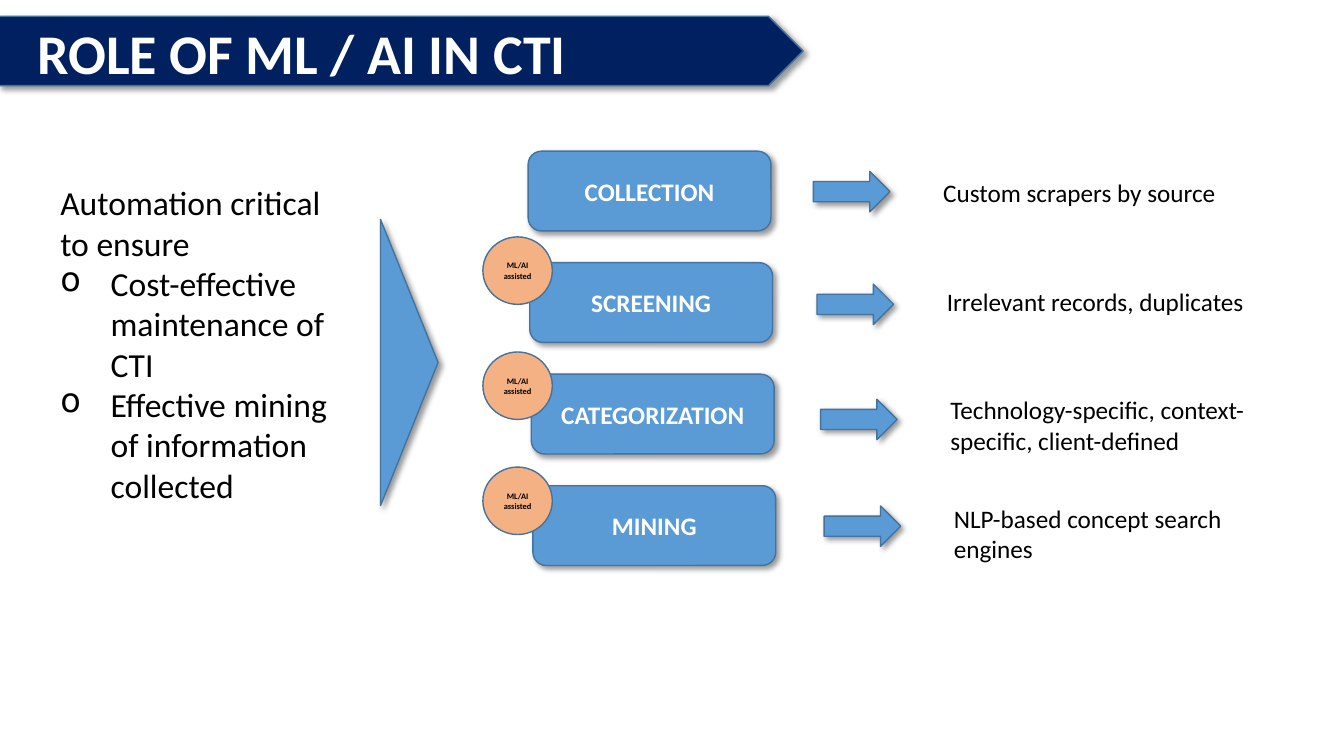
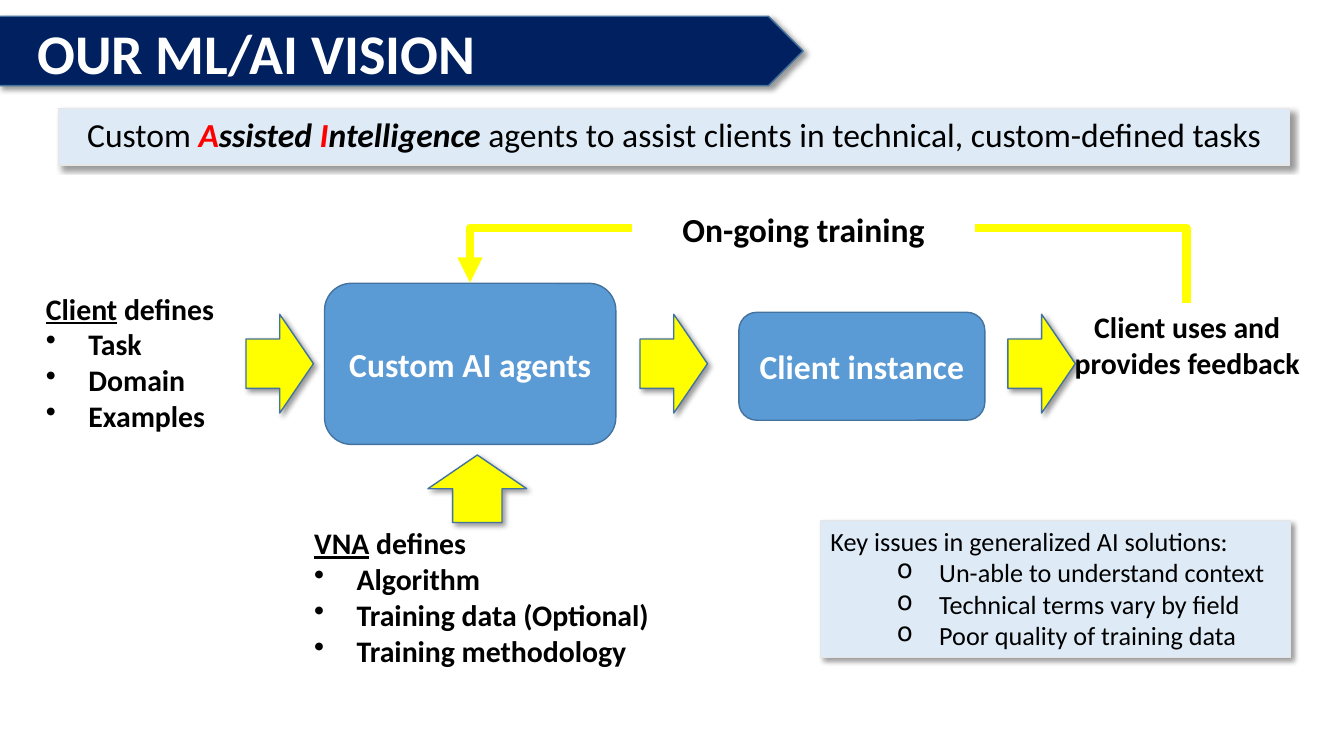
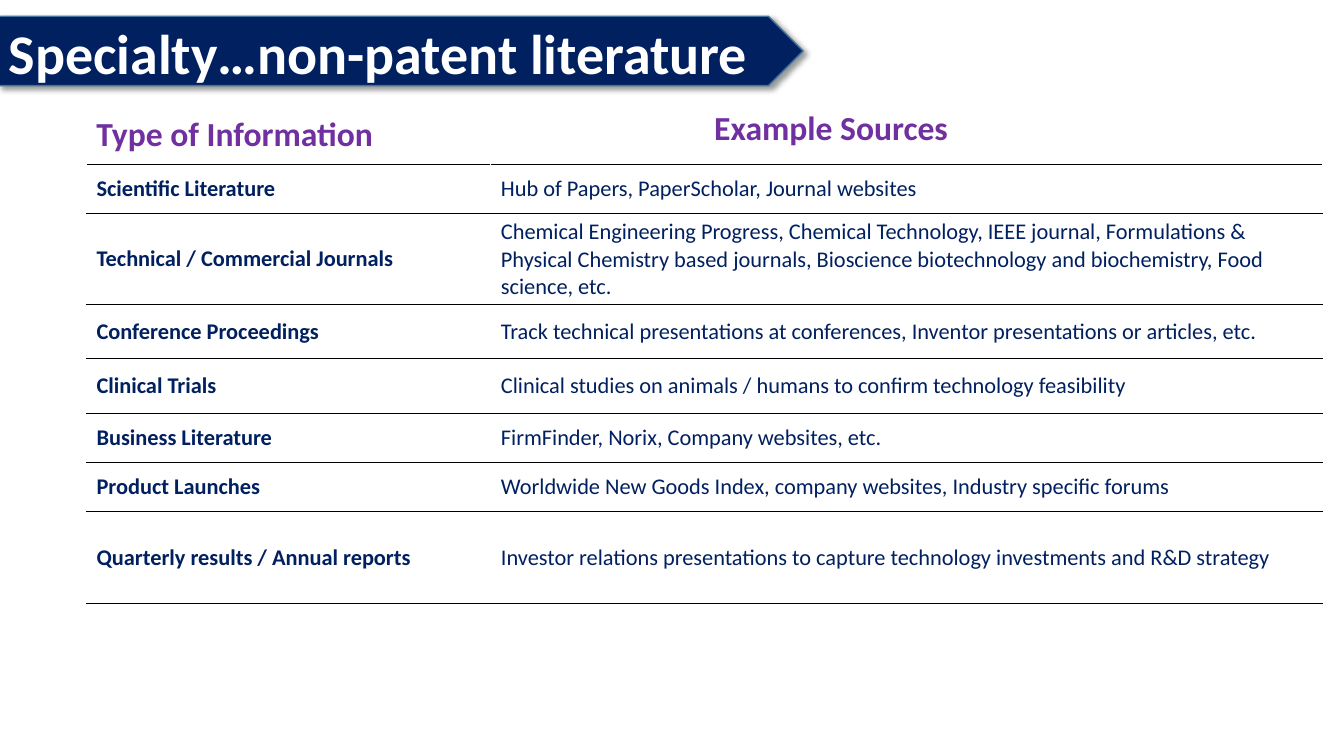
"""Build three slides on machine learning in competitive technical intelligence."""
from dataclasses import dataclass
from typing import NamedTuple, Optional

from pptx import Presentation
from pptx.dml.color import RGBColor
from pptx.enum.shapes import MSO_CONNECTOR, MSO_SHAPE as Preset
from pptx.enum.text import MSO_ANCHOR as Anchor, PP_ALIGN as Align
from pptx.oxml import parse_xml
from pptx.oxml.ns import nsdecls, qn
from pptx.util import Cm, Pt

FONT = "Calibri"
COLORS = {
    "navy": "002060",
    "blue": "5B9BD5",
    "outline": "43739E",
    "pale": "DEEBF7",
    "grey": "E7E6E6",
    "peach": "F4B183",
    "yellow": "FFFF00",
    "purple": "7030A0",
    "red": "FF0000",
    "black": "000000",
    "white": "FFFFFF",
}


class Box(NamedTuple):
    left: float
    top: float
    width: float
    height: float

    def lengths(self) -> tuple:
        return tuple(Cm(value) for value in self)


class Words(NamedTuple):
    text: str
    bold: Optional[bool] = None
    italic: bool = False
    underline: bool = False
    color: Optional[str] = None


@dataclass(frozen=True)
class Line:
    words: tuple
    bullet: str = ""
    margin: float = 0
    hanging: float = 0
    level: int = 0


@dataclass(frozen=True)
class Style:
    size: float
    color: str = "black"
    bold: bool = False
    align: Align = Align.LEFT
    anchor: Anchor = Anchor.TOP


@dataclass(frozen=True)
class Look:
    fill: str
    line: Optional[str] = "outline"
    weight: float = 1
    shadow: bool = True


class Stage(NamedTuple):
    name: str
    note: str
    arrow_top: float
    assisted: bool


BAND = Box(-0.03, 0.41, 20.27, 1.75)
TITLE = Box(0.69, 0.33, 17.58, 1.96)
WIDE_TITLE = Box(-0.03, 0.33, 23.16, 1.96)
HEADLINE = Style(40, "white", True)
HEADING = Style(24, "purple", True)
NOTE = Style(18)
LIST = Style(21.3, bold=True)
AGENT = Style(24, "white", True, Align.CENTER, Anchor.MIDDLE)
PANEL = Look("pale", "grey", 0.75)
BLUE = Look("blue")
FLAT_BLUE = Look("blue", shadow=False)
YELLOW = Look("yellow")

STAGES = (
    Stage("COLLECTION", "Custom scrapers by source", 4.32, False),
    Stage("SCREENING", "Irrelevant records, duplicates", 7.16, True),
    Stage("CATEGORIZATION", "Technology-specific, context-specific, client-defined", 10.06, True),
    Stage("MINING", "NLP-based concept search engines", 12.75, True),
)

SOURCES = (
    ("Scientific Literature", "Hub of Papers, PaperScholar, Journal websites", 1.24),
    ("Technical / Commercial Journals",
     "Chemical Engineering Progress, Chemical Technology, IEEE journal, Formulations & "
     "Physical Chemistry based journals, Bioscience biotechnology and biochemistry, "
     "Food science, etc.", 2.29),
    ("Conference Proceedings",
     "Track technical presentations at conferences, Inventor presentations or articles, etc.", 1.37),
    ("Clinical Trials",
     "Clinical studies on animals / humans to confirm technology feasibility", 1.37),
    ("Business Literature", "FirmFinder, Norix, Company websites, etc.", 1.24),
    ("Product Launches",
     "Worldwide New Goods Index, company websites, Industry specific forums", 1.24),
    ("Quarterly results / Annual reports",
     "Investor relations presentations to capture technology investments and R&D strategy", 2.31),
)


def rgb(name: str) -> RGBColor:
    return RGBColor.from_string(COLORS[name])


def plain(text: str) -> Line:
    return Line((Words(text),))


def bullets(texts: tuple, mark: str, margin: float, hanging: float, level: int = 0) -> tuple:
    return tuple(Line((Words(text),), mark, margin, hanging, level) for text in texts)


def defines(who: str, items: tuple) -> tuple:
    lead = Line((Words(who, underline=True), Words(" defines")))
    return (lead, *bullets(items, "•", 1.07, 1.07))


def write(frame, lines: tuple, style: Style) -> None:
    frame.word_wrap = True
    frame.vertical_anchor = style.anchor
    for index, line in enumerate(lines):
        paragraph = frame.add_paragraph() if index else frame.paragraphs[0]
        paragraph.alignment = style.align
        paragraph.level = line.level
        if line.bullet:
            properties = paragraph._p.get_or_add_pPr()
            properties.set("marL", str(Cm(line.margin)))
            properties.set("indent", str(-Cm(line.hanging)))
            properties.append(parse_xml(f'<a:buChar {nsdecls("a")} char="{line.bullet}"/>'))
        for words in line.words:
            run = paragraph.add_run()
            run.text = words.text
            font = run.font
            font.name = FONT
            font.size = Pt(style.size)
            font.bold = style.bold if words.bold is None else words.bold
            font.italic = words.italic
            font.underline = words.underline
            font.color.rgb = rgb(words.color or style.color)


def add_text(slide, box: Box, lines: tuple, style: Style) -> None:
    write(slide.shapes.add_textbox(*box.lengths()).text_frame, lines, style)


def add_block(slide, preset: Preset, box: Box, look: Look, lines: tuple = (),
              style: Style = NOTE, rotation: float = 0):
    block = slide.shapes.add_shape(preset, *box.lengths())
    block.rotation = rotation
    block.fill.solid()
    block.fill.fore_color.rgb = rgb(look.fill)
    if look.line:
        block.line.color.rgb = rgb(look.line)
        block.line.width = Pt(look.weight)
    else:
        block.line.fill.background()
    block.shadow.inherit = False
    if look.shadow:
        block.element.spPr.find(qn("a:effectLst")).append(parse_xml(
            f'<a:outerShdw {nsdecls("a")} blurRad="{Pt(4)}" dist="{Pt(3)}" dir="2700000" '
            f'algn="tl" rotWithShape="0"><a:srgbClr val="{COLORS["black"]}">'
            '<a:alpha val="40000"/></a:srgbClr></a:outerShdw>'))
    if lines:
        write(block.text_frame, lines, style)
    return block


def add_titled_slide(deck, title: str, box: Box = TITLE):
    slide = deck.slides.add_slide(deck.slide_layouts[5])
    heading = slide.shapes.title
    heading.left, heading.top, heading.width, heading.height = box.lengths()
    write(heading.text_frame, (plain(title),), HEADLINE)
    band = add_block(slide, Preset.PENTAGON, BAND, Look("navy"))
    heading.element.addprevious(band.element)
    return slide


def add_training_loop(slide) -> None:
    loop = slide.shapes.add_connector(
        MSO_CONNECTOR.ELBOW, Cm(20.62), Cm(16.41), Cm(21.13), Cm(-1.65))
    loop.line.color.rgb = rgb("yellow")
    loop.line.width = Pt(6)
    outline = loop.element.spPr
    outline.find(qn("a:xfrm")).set("rot", "16200000")
    outline.find(qn("a:prstGeom")).find(qn("a:avLst")).append(
        parse_xml(f'<a:gd {nsdecls("a")} name="adj1" fmla="val 371600"/>'))
    outline.find(qn("a:ln")).append(parse_xml(f'<a:tailEnd {nsdecls("a")} type="triangle"/>'))
    outline.append(parse_xml(f'<a:effectLst {nsdecls("a")}/>'))


def set_borders(cell) -> None:
    properties = cell._tc.get_or_add_tcPr()
    sides = (("lnL", "white"), ("lnR", "white"), ("lnT", "black"), ("lnB", "black"))
    for index, (side, color) in enumerate(sides):
        properties.insert(index, parse_xml(
            f'<a:{side} {nsdecls("a")} w="{Pt(1)}"><a:solidFill>'
            f'<a:srgbClr val="{COLORS[color]}"/></a:solidFill></a:{side}>'))


def build_role(deck) -> None:
    slide = add_titled_slide(deck, "ROLE OF ML / AI IN CTI")
    goals = ("Cost-effective maintenance of CTI", "Effective mining of information collected")
    add_text(slide, Box(1.27, 4.47, 7.47, 8.46),
             (plain("Automation critical to ensure"), *bullets(goals, "o", 1.27, 1.27)), Style(24))
    add_block(slide, Preset.ISOSCELES_TRIANGLE, Box(6.71, 8.41, 7.21, 1.45), BLUE, rotation=90)
    stage_style = Style(18, "white", True, Align.CENTER, Anchor.MIDDLE)
    badge_style = Style(6, "black", True, Align.CENTER, Anchor.MIDDLE)
    for index, stage in enumerate(STAGES):
        shift = 0.09 * index
        add_block(slide, Preset.ROUNDED_RECTANGLE,
                  Box(13.31 + 0.04 * index, 3.81 + 2.81 * index, 6.12, 2.01),
                  BLUE, (plain(stage.name),), stage_style)
        add_block(slide, Preset.RIGHT_ARROW, Box(20.5 + shift, stage.arrow_top, 1.93, 1.02), BLUE)
        add_text(slide, Box(23.52 + shift, 4.34 + 2.74 * index, 8.28, 1.8),
                 (plain(stage.note),), NOTE)
        if stage.assisted:
            add_block(slide, Preset.OVAL, Box(12.17, 3.07 + 2.9 * index, 1.75, 1.7),
                      Look("peach", shadow=False), (plain("ML/AI assisted"),), badge_style)


def build_vision(deck) -> None:
    slide = add_titled_slide(deck, "OUR ML/AI VISION")
    add_training_loop(slide)
    promise = Line((
        Words("Custom "),
        Words("A", True, True, color="red"),
        Words("ssisted ", True, True),
        Words("I", True, True, color="red"),
        Words("ntelligence ", True, True),
        Words("agents to assist clients in technical, custom-defined tasks"),
    ))
    add_block(slide, Preset.RECTANGLE, Box(1.47, 2.74, 31.04, 1.42), PANEL,
              (promise,), Style(24, align=Align.CENTER))
    add_text(slide, Box(7.67, 13.11, 9.45, 3.91),
             defines("VNA", ("Algorithm", "Training data (Optional)", "Training methodology")), LIST)
    add_block(slide, Preset.ROUNDED_RECTANGLE, Box(8.18, 7.14, 7.34, 4.06), FLAT_BLUE,
              (plain("Custom AI agents"),), AGENT)
    add_block(slide, Preset.ROUNDED_RECTANGLE, Box(18.62, 7.87, 6.2, 2.72), FLAT_BLUE,
              (plain("Client instance"),), AGENT)
    add_text(slide, Box(26.82, 7.65, 6.2, 3), (plain("Client uses and provides feedback"),),
             Style(21.3, bold=True, align=Align.CENTER))
    add_block(slide, Preset.RECTANGLE, Box(15.93, 5.13, 8.64, 1.27),
              Look("white", None, shadow=False), (plain("On-going training"),),
              Style(24, bold=True, align=Align.CENTER))
    add_text(slide, Box(0.91, 7.19, 5.28, 3.91),
             defines("Client", ("Task", "Domain", "Examples")), LIST)
    for left, top, rotation in ((6.2, 7.92, 0), (11.18, 11.07, 270), (16.13, 7.92, 0), (25.4, 7.92, 0)):
        add_block(slide, Preset.RIGHT_ARROW, Box(left, top, 1.7, 2.49), YELLOW, rotation=rotation)
    issues = ("Un-able to understand context", "Technical terms vary by field",
              "Poor quality of training data")
    add_block(slide, Preset.RECTANGLE, Box(20.68, 13.11, 11.84, 3.45), PANEL,
              (plain("Key issues in generalized AI solutions:"),
               *bullets(issues, "o", 2.74, 1.07, 1)), Style(18.7))


def build_literature(deck) -> None:
    slide = add_titled_slide(deck, "Specialty…non-patent literature", WIDE_TITLE)
    add_text(slide, Box(2.18, 2.72, 8.31, 1.27), (plain("Type of Information"),), HEADING)
    add_text(slide, Box(17.75, 2.57, 8.31, 1.27), (plain("Example Sources"),), HEADING)
    place = Box(2.18, 4.14, 31.15, sum(height for _, _, height in SOURCES))
    table = slide.shapes.add_table(len(SOURCES), 2, *place.lengths()).table
    table.first_row = False
    table.horz_banding = False
    for column, width in zip(table.columns, (10.19, 20.96)):
        column.width = Cm(width)
    for row, (kind, examples, height) in zip(table.rows, SOURCES):
        row.height = Cm(height)
        for cell, text, bold in zip(row.cells, (kind, examples), (True, False)):
            write(cell.text_frame, (plain(text),), Style(16, "navy", bold))
            cell.vertical_anchor = Anchor.MIDDLE
            cell.fill.solid()
            cell.fill.fore_color.rgb = rgb("white")
            set_borders(cell)


def main() -> None:
    deck = Presentation()
    deck.slide_width, deck.slide_height = Cm(33.87), Cm(19.05)
    build_role(deck)
    build_vision(deck)
    build_literature(deck)
    deck.save("out.pptx")


if __name__ == "__main__":
    main()
